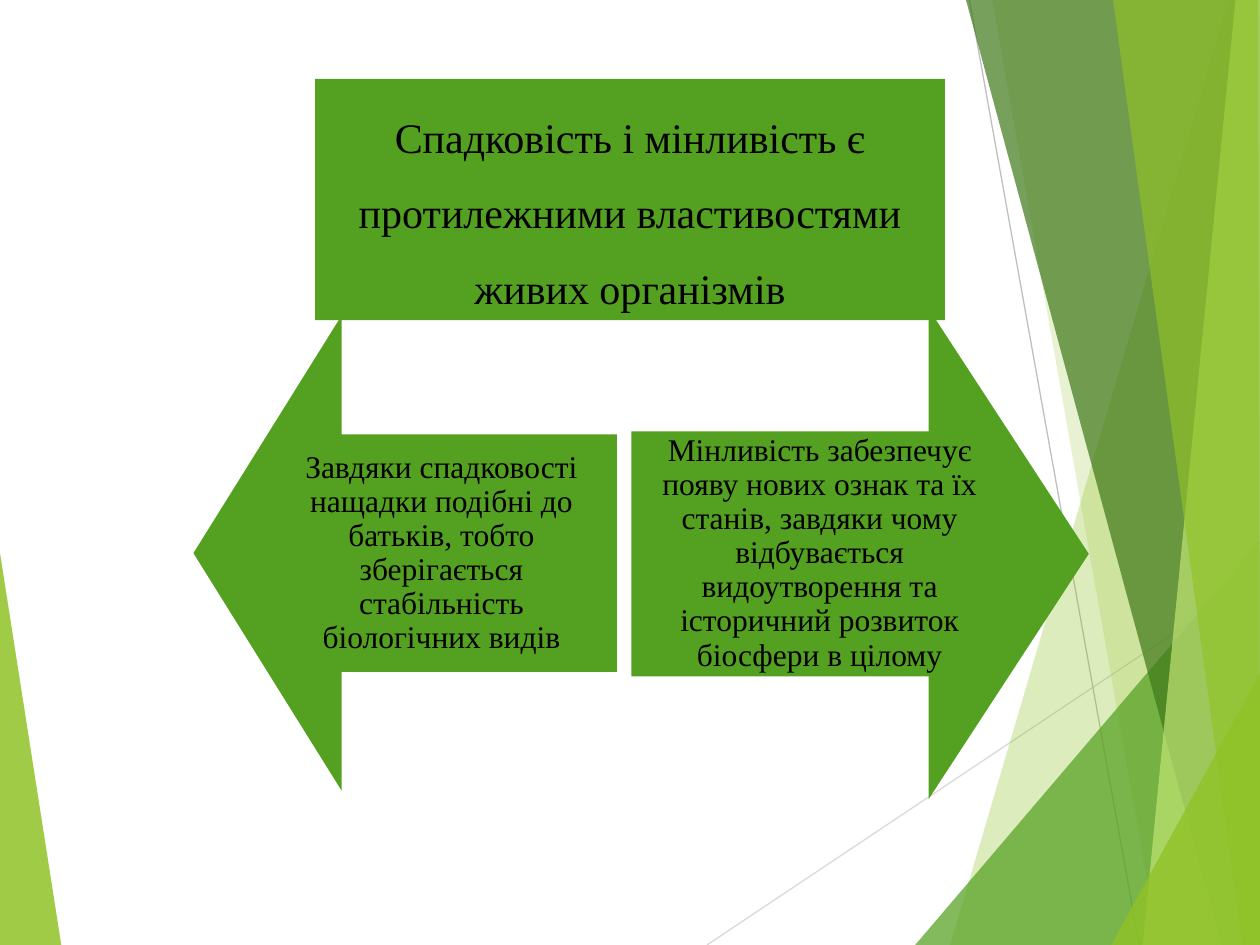
import pptx
import pptx.util
import pptx.dml.color
import pptx.enum.shapes
import pptx.enum.text
import pptx.oxml.ns
import lxml.etree

Pt = pptx.util.Pt
qn = pptx.oxml.ns.qn
Kind = pptx.enum.shapes.MSO_SHAPE
GREEN, LIME = "54A021", "90C226"
WIDE, HIGH = 720, 540

# Facets: corner points, colour, opacity in percent
LEAF = ([(0, 316), (35, 540), (0, 540)], LIME, 85)
FACETS = [
    ([(702, 0), (543, 540), (720, 540), (720, 0)], LIME, 30),
    ([(567, 0), (662, 540), (720, 540), (720, 0)], LIME, 20),
    ([(523, 540), (720, 309), (720, 540)], GREEN, 72),
    ([(552, 0), (698, 540), (720, 540), (720, 0)], "3F7819", 70),
    ([(706, 0), (653, 540), (720, 540), (720, 0)], "C0E474", 70),
    ([(636, 0), (710, 540), (720, 540), (719, 0)], LIME, 65),
    ([(635, 540), (720, 385), (720, 540)], LIME, 80),
]
RAYS = [((404, 540), (720, 329), "D9D9D9"), ((554, 0), (651, 540), "BFBFBF")]

TITLE = "Спадковість і мінливість є протилежними властивостями живих організмів"
# Arrows: box before turning, angle, text box, wording
ARROWS = [
    ((95.8, 195.1, 271.4, 241.9), 270, (152.6, 248.4, 199.4, 135.4),
     "Завдяки спадковості нащадки подібні до батьків, "
     "тобто зберігається стабільність біологічних видів"),
    ((351.4, 185.8, 280.1, 261.4), 90, (360.7, 246.2, 215.3, 140.4),
     "Мінливість забезпечує появу нових ознак та їх станів, завдяки чому "
     "відбувається видоутворення та історичний розвиток біосфери в цілому"),
]


def tint(part, color):
    part.solid()
    part.fore_color.rgb = pptx.dml.color.RGBColor.from_string(color)


def assign(item, values):
    for name, value in values.items():
        setattr(item, name, value)


def paint(shape, color):
    tint(shape.fill, color)
    shape.line.fill.background()


def place(shape, box):
    assign(shape, dict(zip(("left", "top", "width", "height"), map(Pt, box))))


def write(shape, text, size, spacing, inset):
    frame = shape.text_frame
    frame.text = text
    assign(frame, {
        "word_wrap": True,
        "auto_size": pptx.enum.text.MSO_AUTO_SIZE.NONE,
        "vertical_anchor": pptx.enum.text.MSO_ANCHOR.MIDDLE,
    })
    sides = ("left", "top", "right", "bottom")
    assign(frame, {f"margin_{side}": Pt(gap) for side, gap in zip(sides, inset)})
    para = frame.paragraphs[0]
    assign(para, {
        "alignment": pptx.enum.text.PP_ALIGN.CENTER,
        "line_spacing": spacing,
        "space_before": Pt(0),
    })
    font = para.runs[0].font
    assign(font, {"name": "Times New Roman", "size": Pt(size)})
    tint(font.fill, "000000")


def add_facet(slide, points, color, alpha):
    pen = slide.shapes.build_freeform(*points[0], scale=Pt(1))
    pen.add_line_segments(points[1:], close=True)
    shape = pen.convert_to_shape()
    shape.shadow.inherit = False
    paint(shape, color)
    tone = shape.fill._xPr.find(qn("a:solidFill"))[0]
    lxml.etree.SubElement(tone, qn("a:alpha")).set("val", str(alpha * 1000))


def add_ray(slide, start, end, color):
    ends = map(Pt, start + end)
    ray = slide.shapes.add_connector(
        pptx.enum.shapes.MSO_CONNECTOR.STRAIGHT, *ends)
    tint(ray.line.fill, color)
    ray.line.width = Pt(0.75)
    lxml.etree.SubElement(ray._element.spPr, qn("a:effectLst"))


def add_arrow(slide, box, angle, area, text):
    arrow = slide.shapes.add_shape(Kind.UP_ARROW, *map(Pt, box))
    arrow.shadow.inherit = False
    arrow.rotation = angle
    arrow.adjustments[0], arrow.adjustments[1] = 0.5, 0.35
    paint(arrow, GREEN)
    label = slide.shapes.add_textbox(*map(Pt, area))
    write(label, text, 18, 0.9, (10, 10, 10, 10))


def main():
    deck = pptx.Presentation()
    assign(deck, {"slide_width": Pt(WIDE), "slide_height": Pt(HIGH)})
    slide = deck.slides.add_slide(deck.slide_layouts[5])

    # Backdrop
    add_facet(slide, *LEAF)
    for ray in RAYS:
        add_ray(slide, *ray)
    for facet in FACETS:
        add_facet(slide, *facet)

    # Title block
    title = slide.shapes.title
    place(title, (180, 45, 360, 138))
    paint(title, GREEN)
    write(title, TITLE, 24, 1.5, (7.2, 3.6, 7.2, 3.6))

    # Opposing arrows
    for arrow in ARROWS:
        add_arrow(slide, *arrow)

    deck.save("out.pptx")


if __name__ == "__main__":
    main()
